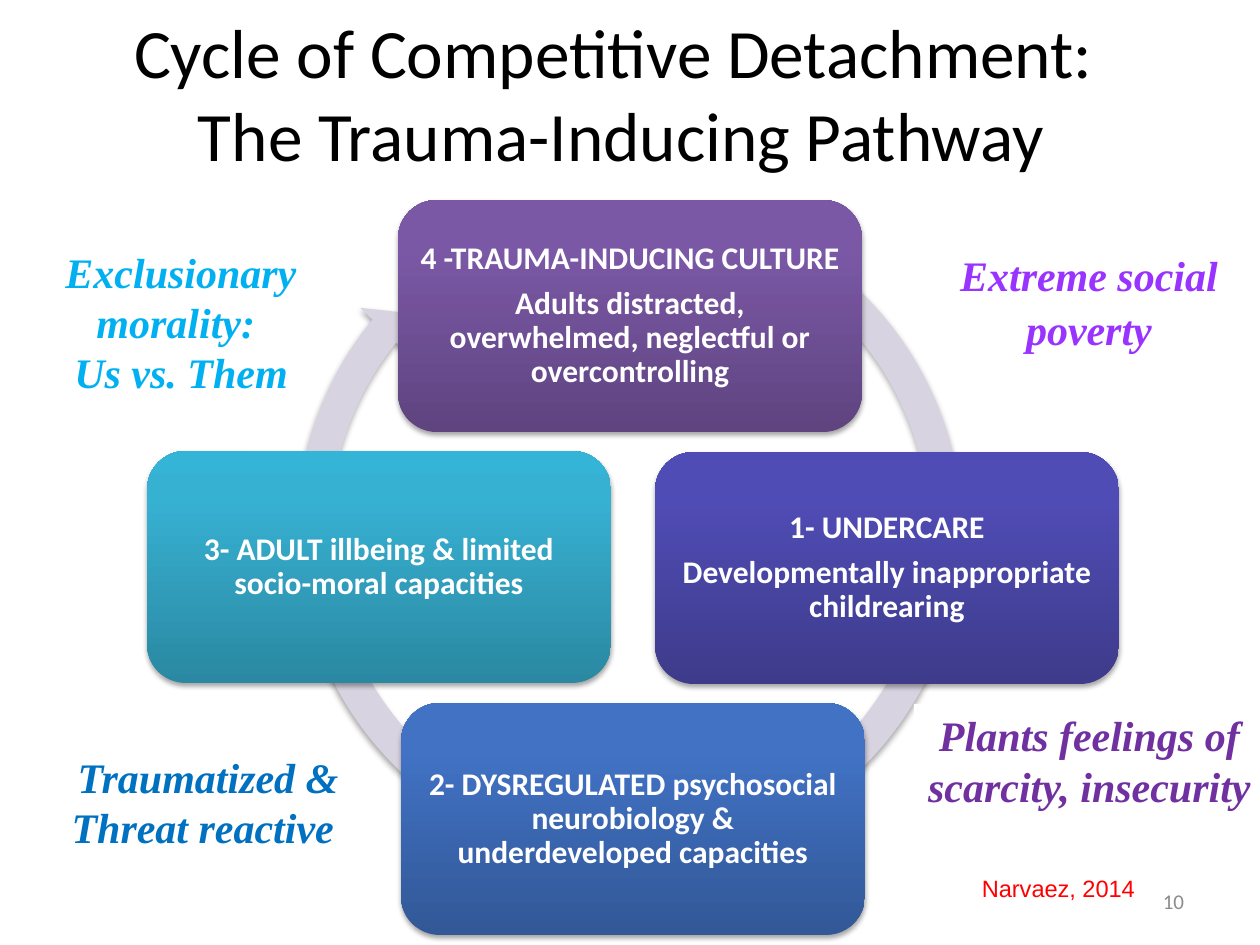
from copy import deepcopy
from pptx import Presentation, util as u
from pptx.dml.color import RGBColor
from pptx.enum import shapes, text
from pptx.oxml import parse_xml
from pptx.oxml.ns import nsdecls, qn

PX = 914400 // 126
KIND = shapes.MSO_SHAPE
MID, TOP = text.MSO_ANCHOR.MIDDLE, text.MSO_ANCHOR.TOP
LEFT, MAIN, RIGHT = text.PP_ALIGN.LEFT, text.PP_ALIGN.CENTER, text.PP_ALIGN.RIGHT
SHADE = (
    f'<a:effectLst {nsdecls("a")}><a:outerShdw blurRad="39370" dist="22860" '
    'dir="5400000" rotWithShape="0"><a:srgbClr val="000000">'
    '<a:alpha val="35000"/></a:srgbClr></a:outerShdw></a:effectLst>'
)


def rgb(code):
    return RGBColor.from_string(code)


def write(shape, lines, color, font, para, anchor=TOP, pad=(13, 6)):
    frame = shape.text_frame
    side, edge = (n * PX for n in pad)
    form = dict(word_wrap=True, vertical_anchor=anchor, margin_left=side,
                margin_right=side, margin_top=edge, margin_bottom=edge)
    for key, val in form.items():
        setattr(frame, key, val)
    frame.text = "\n".join(lines)
    for par in frame.paragraphs:
        for key, val in para.items():
            setattr(par, key, val)
        for run in par.runs:
            for key, val in font.items():
                setattr(run.font, key, val)
            run.font.color.rgb = rgb(color)


deck = Presentation()
deck.slide_width, deck.slide_height = 1260 * PX, 945 * PX
slide = deck.slides.add_slide(deck.slide_layouts[6])
items = slide.shapes

title = items.add_textbox(*(n * PX for n in (53, 20, 1121, 145)))
write(title, ["Cycle of Competitive Detachment:\v The Trauma-Inducing Pathway"],
      "000000", dict(name="Calibri", size=u.Pt(39.6)), dict(alignment=MAIN), MID)

ring = items.add_shape(KIND.CIRCULAR_ARROW, *(n * PX for n in (280, 181, 699, 699)))
for i, val in enumerate((0.047, 2.729, 131.486, 178.186, 0.048)):
    ring.adjustments[i] = val
ring.fill.solid()
ring.fill.fore_color.rgb = rgb("D8D3E0")
ring.line.fill.background()
ring._element.spPr.append(parse_xml(SHADE))

steps = [
    (398, 200, ("5F4480", "7B58A6", "7C57A8"),
     ["4 -TRAUMA-INDUCING CULTURE",
      "Adults distracted, overwhelmed, neglectful or overcontrolling"]),
    (655, 452, ("3E3B8B", "504CB5", "4F4BB8"),
     ["1- UNDERCARE", "Developmentally inappropriate childrearing"]),
    (401, 703, ("325897", "4172C4", "3F72C7"),
     ["2- DYSREGULATED psychosocial neurobiology & underdeveloped capacities"]),
    (147, 451, ("2A88A2", "37B1D2", "34B4D6"),
     ["3- ADULT illbeing & limited socio-moral capacities"]),
]
for x, y, tones, lines in steps:
    step = items.add_shape(KIND.ROUNDED_RECTANGLE, x * PX, y * PX, 464 * PX, 232 * PX)
    step.fill.gradient()
    step.fill.gradient_angle = 90
    stops = step._element.spPr.find(".//" + qn("a:gsLst"))
    stops.append(deepcopy(stops[-1]))
    for stop, pos, tone in zip(step.fill.gradient_stops, (0, 0.8, 1), tones):
        stop.position = pos
        stop.color.rgb = rgb(tone)
    step.line.fill.background()
    step._element.spPr.append(parse_xml(SHADE))
    write(step, lines, "FFFFFF", dict(name="Calibri", size=u.Pt(18), bold=True),
          dict(alignment=MAIN, line_spacing=0.9), MID, (9, 9))
    for par in step.text_frame.paragraphs[:-1]:
        par.space_after = u.Pt(6.3)

notes = [
    (934, 240, 310, 145, "9933FF", 1.07, ["Extreme social poverty"]),
    (914, 704, 351, 110, "7030A0", 1, ["Plants feelings of scarcity, insecurity"]),
    (53, 745, 310, 110, "0070C0", 1, ["Traumatized & Threat reactive "]),
    (50, 240, 262, 160, "00B0F0", 1, ["Exclusionary morality: ", "Us vs. Them"]),
]
for x, y, w, h, color, gap, lines in notes:
    note = items.add_shape(KIND.RECTANGLE, x * PX, y * PX, w * PX, h * PX)
    note.shadow.inherit = False
    note.fill.solid()
    note.fill.fore_color.rgb = rgb("FFFFFF")
    note.line.fill.background()
    write(note, lines, color,
          dict(name="Times New Roman", size=u.Pt(24), bold=True, italic=True),
          dict(alignment=MAIN, line_spacing=gap))

cite = items.add_textbox(*(n * PX for n in (969, 868, 212, 42)))
write(cite, ["Narvaez, 2014"], "FF0000", dict(name="Arial", size=u.Pt(13.5)),
      dict(alignment=LEFT))
page = items.add_textbox(*(n * PX for n in (903, 876, 294, 50)))
write(page, ["10"], "8C8C8C", dict(name="Calibri", size=u.Pt(12)),
      dict(alignment=RIGHT), MID)

deck.save("out.pptx")
